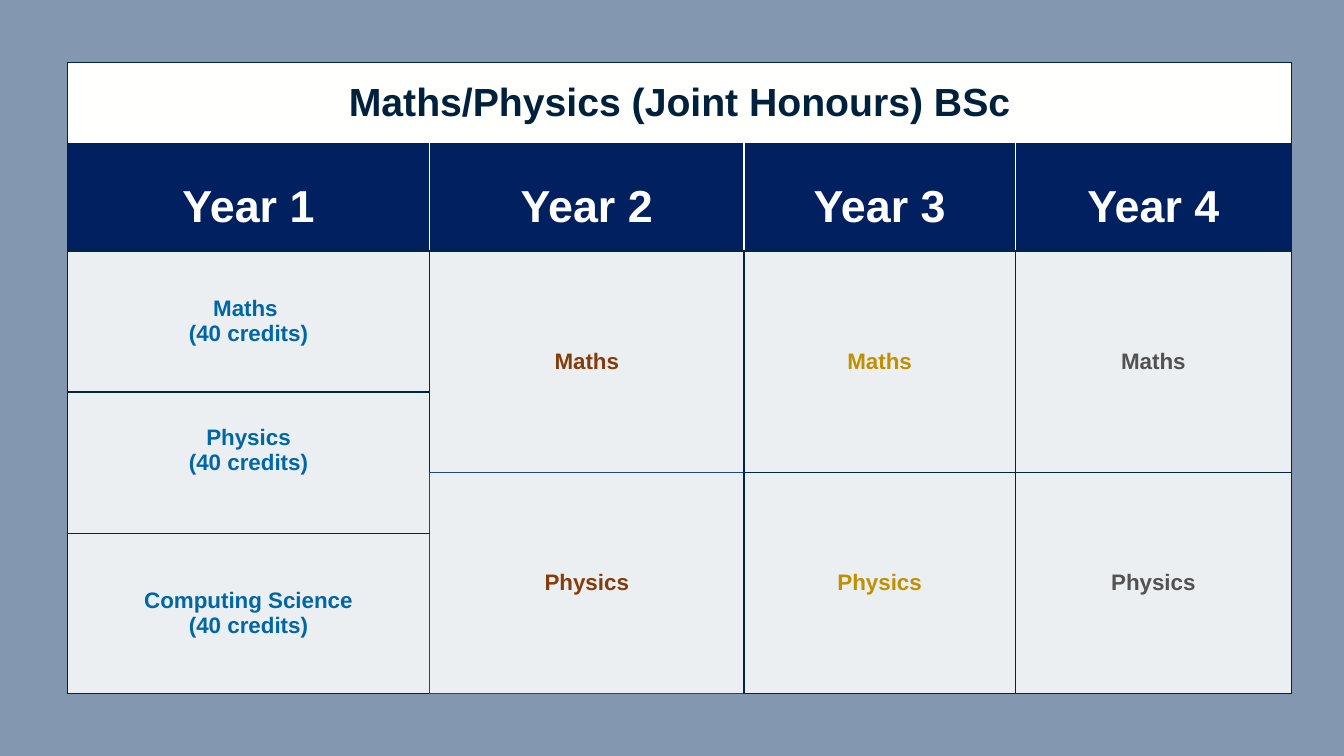
from lxml import etree
from pptx import Presentation
from pptx import util as u
from pptx.dml.color import RGBColor
from pptx.enum import text
from pptx.oxml.ns import qn

COLOURS = {
    "background": "8497B0", "title": "00213B", "header": "002060",
    "border": "002542", "accent": "1F497D", "white": "FFFFFF", "paper": "FFFFFE",
    "blue": "0067A7", "brown": "843C0B", "gold": "BF9000", "grey": "525252",
}
COLUMN_WIDTHS = [3.59, 3.12, 2.69, 2.74]
ROW_HEIGHTS = [0.8, 1.07, 1.4, 0.8, 0.6, 1.59]


class CourseSlide:
    """Holds the style and the current page."""

    def __init__(self, deck):
        self.page = deck.slides.add_slide(deck.slide_layouts[6])
        fill = self.page.background.fill
        fill.solid()
        fill.fore_color.rgb = self.colour("background")

    def colour(self, name):
        return RGBColor.from_string(COLOURS[name])

    def table(self, left, top, widths, heights):
        frame = self.page.shapes.add_table(
            len(heights), len(widths), u.Inches(left), u.Inches(top),
            u.Inches(sum(widths)), u.Inches(sum(heights)))
        self.grid = frame.table
        for column, width in zip(self.grid.columns, widths):
            column.width = u.Inches(width)
        for row, height in zip(self.grid.rows, heights):
            row.height = u.Inches(height)

    def borders(self, cell, changes):
        properties = cell._tc.get_or_add_tcPr()
        for side in "LRTB":
            line = etree.SubElement(properties, qn(f"a:ln{side}"), w=str(u.Pt(1)))
            fill = etree.SubElement(line, qn("a:solidFill"))
            etree.SubElement(fill, qn("a:srgbClr"), val=COLOURS[changes.get(side, "border")])

    def fill(self, cell, name, opacity):
        cell.fill.solid()
        cell.fill.fore_color.rgb = self.colour(name)
        if opacity < 100:
            tint = cell._tc.tcPr.find(f"{qn('a:solidFill')}/{qn('a:srgbClr')}")
            etree.SubElement(tint, qn("a:alpha"), val=str(opacity * 1000))

    def cell(self, row, column, lines, size, colour, fill="paper", opacity=85,
             rows=1, columns=1, edges=None, spacing=1.0, bottom=0.06):
        origin = self.grid.cell(row, column)
        if rows * columns > 1:
            origin.merge(self.grid.cell(row + rows - 1, column + columns - 1))
        for down in range(rows):
            for across in range(columns):
                part = self.grid.cell(row + down, column + across)
                self.borders(part, edges or {})
                self.fill(part, fill, opacity)
        layout = {"margin_left": u.Inches(0.12), "margin_right": u.Inches(0.12),
                  "margin_top": u.Inches(0.06), "margin_bottom": u.Inches(bottom),
                  "vertical_anchor": text.MSO_ANCHOR.MIDDLE}
        for name, value in layout.items():
            setattr(origin, name, value)
        font = {"name": "Arial", "size": u.Pt(size), "bold": True}
        for index, line in enumerate(lines):
            box = origin.text_frame
            para = box.add_paragraph() if index else box.paragraphs[0]
            para.alignment = text.PP_ALIGN.CENTER
            para.line_spacing = spacing
            span = para.add_run()
            span.text = line
            for name, value in font.items():
                setattr(span.font, name, value)
            span.font.color.rgb = self.colour(colour)


def main():
    deck = Presentation()
    deck.slide_width, deck.slide_height = u.Inches(13.33), u.Inches(7.5)
    course = CourseSlide(deck)
    course.table(0.67, 0.62, COLUMN_WIDTHS, ROW_HEIGHTS)

    # Title row
    course.cell(0, 0, ["Maths/Physics (Joint Honours) BSc"], 28, "title",
                opacity=100, columns=4)

    # Year headings, with white lines between them
    last = len(COLUMN_WIDTHS) - 1
    for column in range(last + 1):
        edges = {"L": "paper" if column > 0 else "border",
                 "R": "paper" if column < last else "border"}
        course.cell(1, column, [f"Year {column + 1}"], 32, "white", "header", 100,
                    edges=edges, spacing=1.4)

    # Year 1: three subjects
    credits = "(40 credits)"
    course.cell(2, 0, ["Maths ", credits], 16, "blue")
    course.cell(3, 0, ["Physics", credits], 16, "blue", rows=2,
                edges={"R": "accent"}, bottom=0.31)
    course.cell(5, 0, ["Computing Science", credits], 16, "blue", edges={"R": "accent"})

    # Years 2 to 4: two subjects each
    for column, colour in enumerate(["brown", "gold", "grey"], start=1):
        second = column == 1
        course.cell(2, column, ["Maths"], 16, colour, rows=2,
                    edges={"B": "accent"} if second else None)
        course.cell(4, column, ["Physics"], 16, colour, rows=2,
                    edges=dict.fromkeys("LTB", "accent") if second else None)

    deck.save("out.pptx")


if __name__ == "__main__":
    main()
